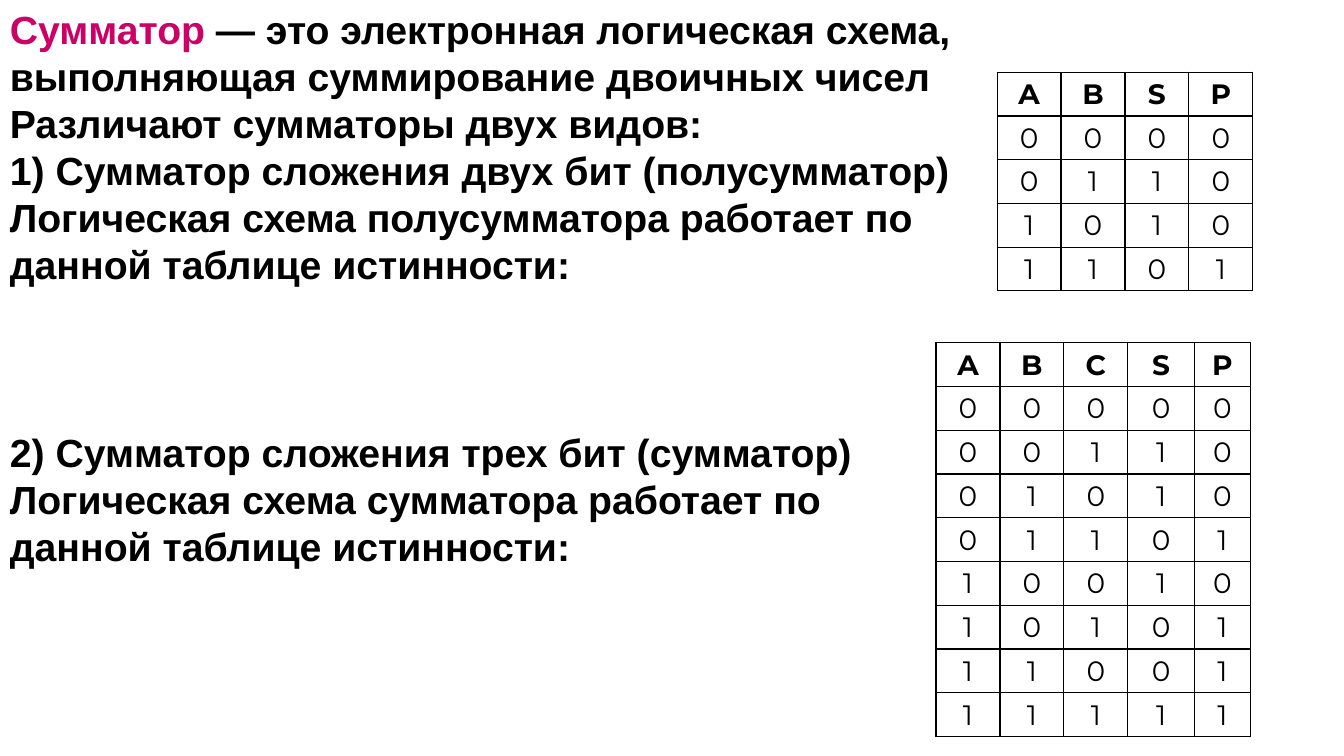
"""Slide on binary adders with truth tables worked out from the bits."""
from dataclasses import dataclass
from itertools import product

from lxml.etree import SubElement as Sub
from pptx import Presentation as Deck
from pptx.dml.color import RGBColor as Rgb
from pptx.enum.text import PP_ALIGN as Align
from pptx.oxml.ns import qn
from pptx.util import Cm, Pt

INK = "000000"
BODY = {"name": "Arial", "size": Pt(28), "bold": True}
HEAD = {"name": "Montserrat", "size": Pt(20), "bold": True}
DIGIT = HEAD | {"bold": False}
ROW = Cm(1.1)


@dataclass
class Run:
    text: str
    tint: str = INK


@dataclass
class Para:
    runs: list[Run]
    gap: float = 0


@dataclass
class Truth:
    heads: str
    left: float
    top: float
    cols: list[float]


PARAS = [
    Para([Run("Сумматор", "CC0066"),
          Run(" — это электронная логическая схема, выполняющая суммирование двоичных чисел")]),
    Para([Run("Различают сумматоры двух видов:")]),
    Para([Run("1) Сумматор сложения двух бит (полусумматор)")]),
    Para([Run("Логическая схема полусумматора работает по")]),
    Para([Run("данной таблице истинности:")]),
    Para([Run("2) Сумматор сложения трех бит (сумматор)")], 100.7),
    Para([Run("Логическая схема сумматора работает по")]),
    Para([Run("данной таблице истинности:")]),
]
TRUTHS = [
    Truth("ABSP", 25.13, 1.82, [1.61] * 4),
    Truth("ABСSP", 23.59, 8.64, [1.61, 1.61, 1.61, 1.68, 1.41]),
]


def tint(code: str) -> Rgb:
    return Rgb.from_string(code)


def style(font, form: dict, code: str = INK) -> None:
    for key, val in form.items():
        setattr(font, key, val)
    font.color.rgb = tint(code)


def border(cell) -> None:
    props = cell._tc.get_or_add_tcPr()
    for spot, side in enumerate("LRTB"):
        line = Sub(props, qn(f"a:ln{side}"), w=str(Pt(1)))
        fill = Sub(line, qn("a:solidFill"))
        Sub(fill, qn("a:srgbClr"), val=INK)
        props.insert(spot, line)


def write(slide, paras: list[Para]) -> None:
    frame = slide.shapes.add_textbox(0, 0, Cm(24.49), Cm(14.63)).text_frame
    frame.word_wrap = True
    for spot, para in enumerate(paras):
        line = frame.add_paragraph() if spot else frame.paragraphs[0]
        line.space_before = Pt(para.gap)
        for part in para.runs:
            run = line.add_run()
            run.text = part.text
            style(run.font, BODY, part.tint)


def tabulate(slide, truth: Truth) -> None:
    rows = [list(truth.heads)]
    for bits in product((0, 1), repeat=len(truth.heads) - 2):
        total = sum(bits)
        rows.append([str(bit) for bit in (*bits, total % 2, total // 2)])
    grid = slide.shapes.add_table(
        len(rows), len(truth.cols), Cm(truth.left), Cm(truth.top),
        Cm(sum(truth.cols)), ROW * len(rows)).table
    grid.first_row = grid.horz_banding = False
    for col, width in zip(grid.columns, truth.cols):
        col.width = Cm(width)
    for i, row in enumerate(rows):
        for j, text in enumerate(row):
            cell = grid.cell(i, j)
            cell.fill.background()
            border(cell)
            line = cell.text_frame.paragraphs[0]
            line.alignment = Align.CENTER
            run = line.add_run()
            run.text = text
            style(run.font, DIGIT if i else HEAD)


def main() -> None:
    deck = Deck()
    deck.slide_width, deck.slide_height = Cm(33.87), Cm(19.05)
    slide = deck.slides.add_slide(deck.slide_layouts[6])
    write(slide, PARAS)
    for truth in TRUTHS:
        tabulate(slide, truth)
    deck.save("out.pptx")


if __name__ == "__main__":
    main()
